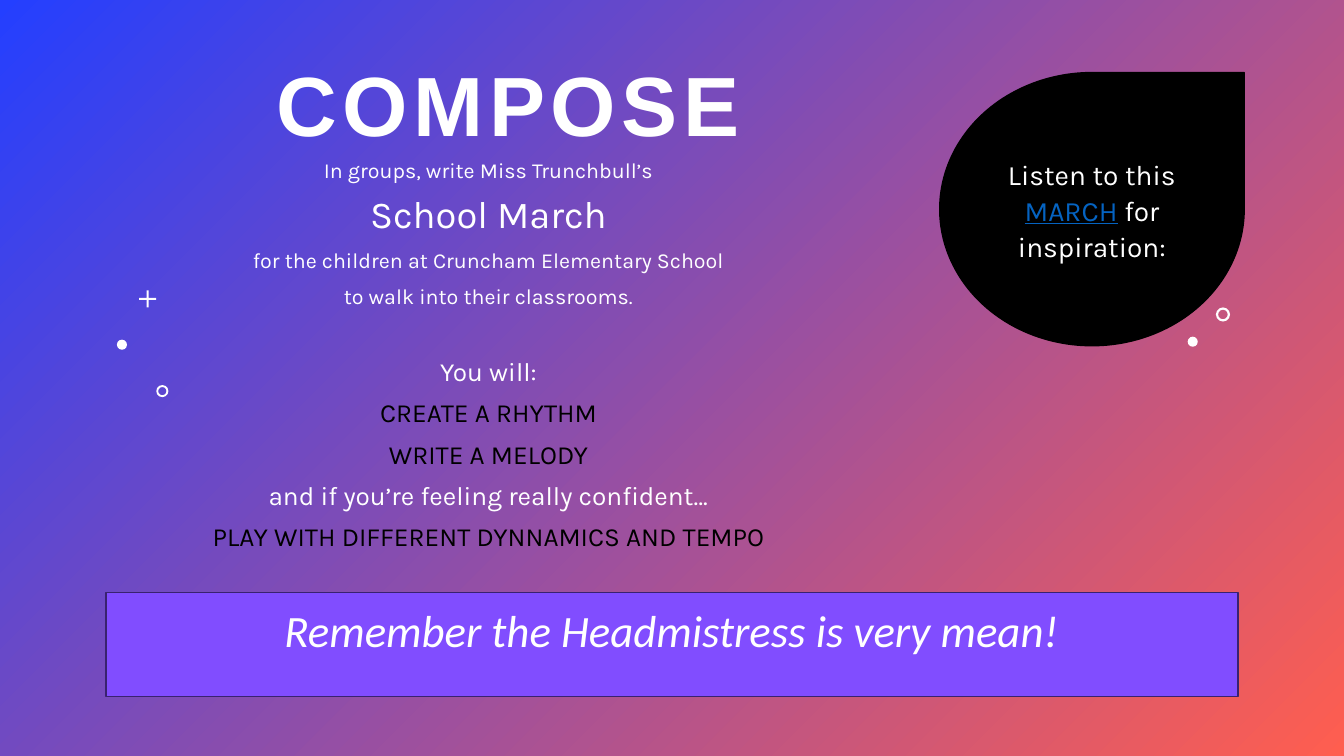
import pptx
import pptx.util
import pptx.dml.color
import pptx.enum.shapes
import pptx.enum.text

Inches, Pt = pptx.util.Inches, pptx.util.Pt
RGBColor = pptx.dml.color.RGBColor
SHAPE = pptx.enum.shapes.MSO_SHAPE
ANCHOR = pptx.enum.text.MSO_ANCHOR
CENTER = pptx.enum.text.PP_ALIGN.CENTER

BLUE = RGBColor(0x24, 0x3F, 0xFF)
CORAL = RGBColor(0xFF, 0x5E, 0x4F)
PURPLE = RGBColor(0x81, 0x4D, 0xFF)
DARK_PURPLE = RGBColor(0x39, 0x22, 0x70)
LINK_BLUE = RGBColor(0x05, 0x63, 0xC1)
WHITE = RGBColor(0xFF, 0xFF, 0xFF)
BLACK = RGBColor(0, 0, 0)


def add_filled(preset, left, top, width, height, fill, line=None):
    shape = slide.shapes.add_shape(
        preset, Inches(left), Inches(top), Inches(width), Inches(height))
    shape.shadow.inherit = False
    shape.fill.solid()
    shape.fill.fore_color.rgb = fill
    if line is None:
        shape.line.fill.background()
    else:
        shape.line.color.rgb = line
        shape.line.width = Pt(1)
    return shape


def style(paragraph, font_name, size, color, line_spacing):
    paragraph.alignment = CENTER
    paragraph.line_spacing = line_spacing
    paragraph.font.name = font_name
    paragraph.font.size = Pt(size)
    paragraph.font.color.rgb = color


prs = pptx.Presentation()
prs.slide_width, prs.slide_height = Inches(13.33), Inches(7.5)
slide = prs.slides.add_slide(prs.slide_layouts[6])

# Diagonal background
background = slide.background.fill
background.gradient()
background.gradient_angle = 315
for stop, color in zip(background.gradient_stops, (BLUE, CORAL)):
    stop.color.rgb = color

# Small ornaments: preset, left, top, size, adjustment
ornaments = [
    (SHAPE.OVAL, 11.78, 3.34, 0.1, None),
    (SHAPE.DONUT, 12.06, 3.05, 0.14, 0.16),
    (SHAPE.CROSS, 1.38, 2.88, 0.17, 0.44),
    (SHAPE.OVAL, 1.16, 3.37, 0.1, None),
    (SHAPE.DONUT, 1.55, 3.82, 0.12, 0.16),
]
for preset, left, top, size, adjustment in ornaments:
    ornament = add_filled(preset, left, top, size, size, WHITE)
    if adjustment is not None:
        ornament.adjustments[0] = adjustment

# Title
title = slide.shapes.add_textbox(Inches(0.04), Inches(0.45), Inches(10), Inches(1.13))
title.text_frame.word_wrap = True
title.text_frame.vertical_anchor = ANCHOR.BOTTOM
heading = title.text_frame.paragraphs[0]
heading_run = heading.add_run()
heading_run.text = "COMPOSE"
heading_run._r.get_or_add_rPr().set("spc", "400")
style(heading, "Arial", 60, WHITE, 0.9)
heading.font.bold = True

# Task: text, size, colour, space before
task_lines = [
    ("In groups, write Miss Trunchbull’s", 15.3, WHITE, 0),
    ("School March", 27.2, WHITE, 10),
    ("for the children at Cruncham Elementary School", 15.3, WHITE, 10),
    ("to walk into their classrooms.", 15.3, WHITE, 10),
    ("You will:", 18.7, WHITE, 36),
    ("CREATE A RHYTHM", 18.7, BLACK, 10),
    ("WRITE A MELODY", 18.7, BLACK, 10),
    ("and if you’re feeling really confident…", 18.7, WHITE, 10),
    ("PLAY WITH DIFFERENT DYNNAMICS AND TEMPO", 18.7, BLACK, 10),
]
task = slide.shapes.add_textbox(Inches(0.94), Inches(1.54), Inches(7.81), Inches(4.14))
task.text_frame.word_wrap = True
for i, (text, size, color, space) in enumerate(task_lines):
    line = task.text_frame.add_paragraph() if i else task.text_frame.paragraphs[0]
    line.text = text
    style(line, "Karla", size, color, 0.87)
    if space:
        line.space_before = Pt(space)

# Listening prompt
prompt = add_filled(SHAPE.TEAR, 9.32, 0.72, 3.02, 2.71, BLACK, BLACK).text_frame
prompt.word_wrap = True
prompt.vertical_anchor = ANCHOR.MIDDLE
listen = prompt.paragraphs[0]
listen.text = "Listen to this"
style(listen, "Karla", 20, WHITE, 1.07)
inspiration = prompt.add_paragraph()
march = inspiration.add_run()
march.text = "MARCH"
march.font.color.rgb = LINK_BLUE
march.font.underline = True
inspiration.add_run().text = " for inspiration:"
style(inspiration, "Karla", 20, WHITE, 1.07)

# Reminder banner
banner = add_filled(SHAPE.RECTANGLE, 1.05, 5.88, 11.23, 1.03, PURPLE, DARK_PURPLE).text_frame
banner.word_wrap = True
banner.vertical_anchor = ANCHOR.MIDDLE
banner.margin_bottom = Inches(0.38)
reminder = banner.paragraphs[0]
reminder.text = "Remember the Headmistress is very mean!"
style(reminder, "Calibri", 32, WHITE, 1.07)
reminder.font.italic = True

prs.save("out.pptx")
